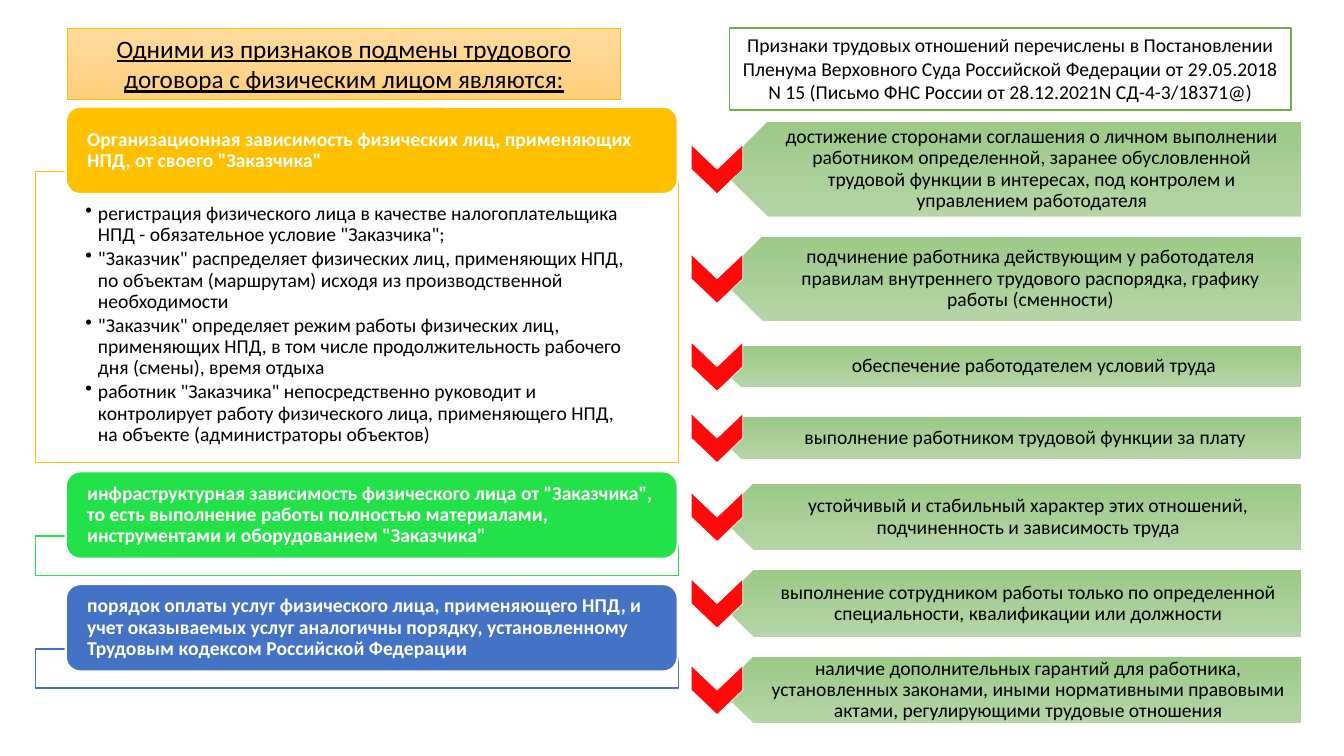
from lxml.etree import SubElement
from pptx import Presentation
from pptx.dml.color import RGBColor
from pptx.enum.shapes import MSO_SHAPE
from pptx.enum.text import MSO_ANCHOR, PP_ALIGN
from pptx.oxml.ns import qn
from pptx.util import Cm, Pt

PLATE_GRADIENT = ("B5D5A7", "9CC987")
HEADING_GRADIENT = ("FFDB9E", "FFD07C")
HEADING_INSETS = (0.25, 0.13, 0.25, 0.13)
CHEVRON_WIDTH, CHEVRON_HEIGHT = 1.3, 1.24

# Heading, colour, height of the frame behind it, bullets
DEPENDENCIES = [
    ('Организационная зависимость физических лиц, применяющих НПД, от своего "Заказчика"',
     "FFC000", 7.34, [
         'регистрация физического лица в качестве налогоплательщика НПД - '
         'обязательное условие "Заказчика";',
         '"Заказчик" распределяет физических лиц, применяющих НПД, по объектам (маршрутам) '
         'исходя из производственной необходимости',
         '"Заказчик" определяет режим работы физических лиц, применяющих НПД, в том числе '
         'продолжительность рабочего дня (смены), время отдыха',
         'работник "Заказчика" непосредственно руководит и контролирует работу физического '
         'лица, применяющего НПД, на объекте (администраторы объектов)']),
    ('инфраструктурная зависимость физического лица от "Заказчика", то есть выполнение работы '
     'полностью материалами, инструментами и оборудованием "Заказчика"',
     "23E148", 0.99, []),
    ('порядок оплаты услуг физического лица, применяющего НПД, и учет оказываемых услуг '
     'аналогичны порядку, установленному Трудовым кодексом Российской Федерации',
     "4472C4", 0.99, []),
]

# Text, plate height, extra left inset
SIGNS = [
    ("достижение сторонами соглашения о личном выполнении работником определенной, заранее "
     "обусловленной трудовой функции в интересах, под контролем и управлением работодателя",
     2.39, 0),
    ("подчинение работника действующим у работодателя правилам внутреннего трудового "
     "распорядка, графику работы (сменности)", 2.13, 0),
    ("обеспечение работодателем условий труда", 1.02, 0.45),
    ("выполнение работником трудовой функции за плату", 1.07, 0),
    ("устойчивый и стабильный характер этих отношений, подчиненность и зависимость труда",
     1.68, 0),
    ("выполнение сотрудником работы только по определенной специальности, квалификации "
     "или должности", 1.68, 0),
    ("наличие дополнительных гарантий для работника, установленных законами, иными "
     "нормативными правовыми актами, регулирующими трудовые отношения", 1.68, 0),
]


def color(value):
    return RGBColor.from_string(value)


def add_box(page, kind, box, fill, line=None, line_width=1):
    """Add a preset shape; fill is one colour or a (top, bottom) pair."""
    shape = page.shapes.add_shape(kind, *map(Cm, box))
    shape.shadow.inherit = False
    if isinstance(fill, tuple):
        shape.fill.gradient()
        shape.fill.gradient_angle = 270
        for stop, value, position in zip(shape.fill.gradient_stops, fill, (0, 1)):
            stop.color.rgb = color(value)
            stop.position = position
    else:
        shape.fill.solid()
        shape.fill.fore_color.rgb = color(fill)
    if line:
        shape.line.color.rgb = color(line)
        shape.line.width = Pt(line_width)
    else:
        shape.line.fill.background()
    return shape


def write(shape, texts, insets, size=14, ink="000000", align=PP_ALIGN.CENTER,
          anchor=MSO_ANCHOR.MIDDLE, spacing=0.9):
    """Fill a shape with paragraphs; insets are left, top, right, bottom."""
    frame = shape.text_frame
    frame.word_wrap = True
    frame.vertical_anchor = anchor
    frame.margin_left, frame.margin_top, frame.margin_right, frame.margin_bottom = map(Cm, insets)
    for index, text in enumerate(texts):
        para = frame.add_paragraph() if index else frame.paragraphs[0]
        para.text = text
        para.alignment = align
        para.line_spacing = spacing
        para.font.name = "Calibri"
        para.font.size = Pt(size)
        para.font.color.rgb = color(ink)
    return frame.paragraphs


def add_bullet(para):
    para.space_after = Pt(2.1)
    properties = para._p.get_or_add_pPr()
    properties.set("marL", str(Cm(0.32)))
    properties.set("indent", str(-Cm(0.32)))
    bullet = SubElement(properties, qn("a:buChar"))
    bullet.set("char", "•")
    properties.insert_element_before(bullet, "a:tabLst", "a:defRPr", "a:extLst")


def draw_headings(page, left_box, right_box):
    heading = add_box(page, MSO_SHAPE.RECTANGLE, left_box, HEADING_GRADIENT, "FFC000", 0.5)
    paras = write(heading, ["Одними из признаков подмены трудового договора с физическим "
                            "лицом являются:"], HEADING_INSETS, size=18,
                  anchor=MSO_ANCHOR.TOP, spacing=1.0)
    paras[0].font.underline = True
    ruling = add_box(page, MSO_SHAPE.RECTANGLE, right_box, "FFFFFF", "70AD47")
    write(ruling, ["Признаки трудовых отношений перечислены в Постановлении Пленума Верховного "
                   "Суда Российской Федерации от 29.05.2018 N 15 (Письмо ФНС России от "
                   "28.12.2021N СД-4-3/18371@)"], HEADING_INSETS,
          anchor=MSO_ANCHOR.TOP, spacing=1.0)


def draw_dependencies(page, left, top, width):
    """Stack the coloured headings, each over the frame with its bullets."""
    for title, accent, frame_height, bullets in DEPENDENCIES:
        frame_top = top + 1.63
        frame = add_box(page, MSO_SHAPE.RECTANGLE, (left, frame_top, width, frame_height),
                        "FFFFFF", accent)
        if bullets:
            for para in write(frame, bullets, (1.26, 0.81, 1.26, 0.28),
                              align=PP_ALIGN.LEFT, anchor=MSO_ANCHOR.TOP):
                add_bullet(para)
        card = add_box(page, MSO_SHAPE.ROUNDED_RECTANGLE, (left + 0.77, top, width - 0.79, 2.2),
                       accent, "FFFFFF", 1.5)
        paras = write(card, [title], (0.43, 0, 0.43, 0), ink="FFFFFF", align=PP_ALIGN.LEFT)
        paras[0].font.bold = True
        top = frame_top + frame_height + 0.22


def draw_signs(page, left, top, width):
    """Stack the green plates, each with a red chevron over its tip."""
    for text, height, extra_inset in SIGNS:
        row_height = max(height, CHEVRON_WIDTH)
        middle = top + row_height / 2
        plate_top = middle - height / 2
        plate = add_box(page, MSO_SHAPE.PENTAGON, (left, plate_top, width, height),
                        PLATE_GRADIENT)
        plate.rotation = 180
        tip = height / 4
        label = page.shapes.add_textbox(Cm(left + tip), Cm(plate_top),
                                        Cm(width - tip), Cm(height))
        write(label, [text], (0.74 + extra_inset, 0.15, 0.28, 0.15))
        chevron = add_box(page, MSO_SHAPE.CHEVRON,
                          (left - 0.09 - CHEVRON_HEIGHT / 2, middle - CHEVRON_WIDTH / 2,
                           CHEVRON_HEIGHT, CHEVRON_WIDTH), "FE0A0A", "FFFFFF", 0.5)
        chevron.rotation = 90
        top += row_height + 0.5


def main():
    deck = Presentation()
    deck.slide_width, deck.slide_height = Cm(33.87), Cm(19.05)
    page = deck.slides.add_slide(deck.slide_layouts[6])
    draw_dependencies(page, 0.89, 2.69, 16.21)
    draw_signs(page, 18.16, 3.07, 14.63)
    draw_headings(page, (1.7, 0.71, 13.94, 1.8), (18.39, 0.71, 14.15, 2.06))
    deck.save("out.pptx")


if __name__ == "__main__":
    main()
